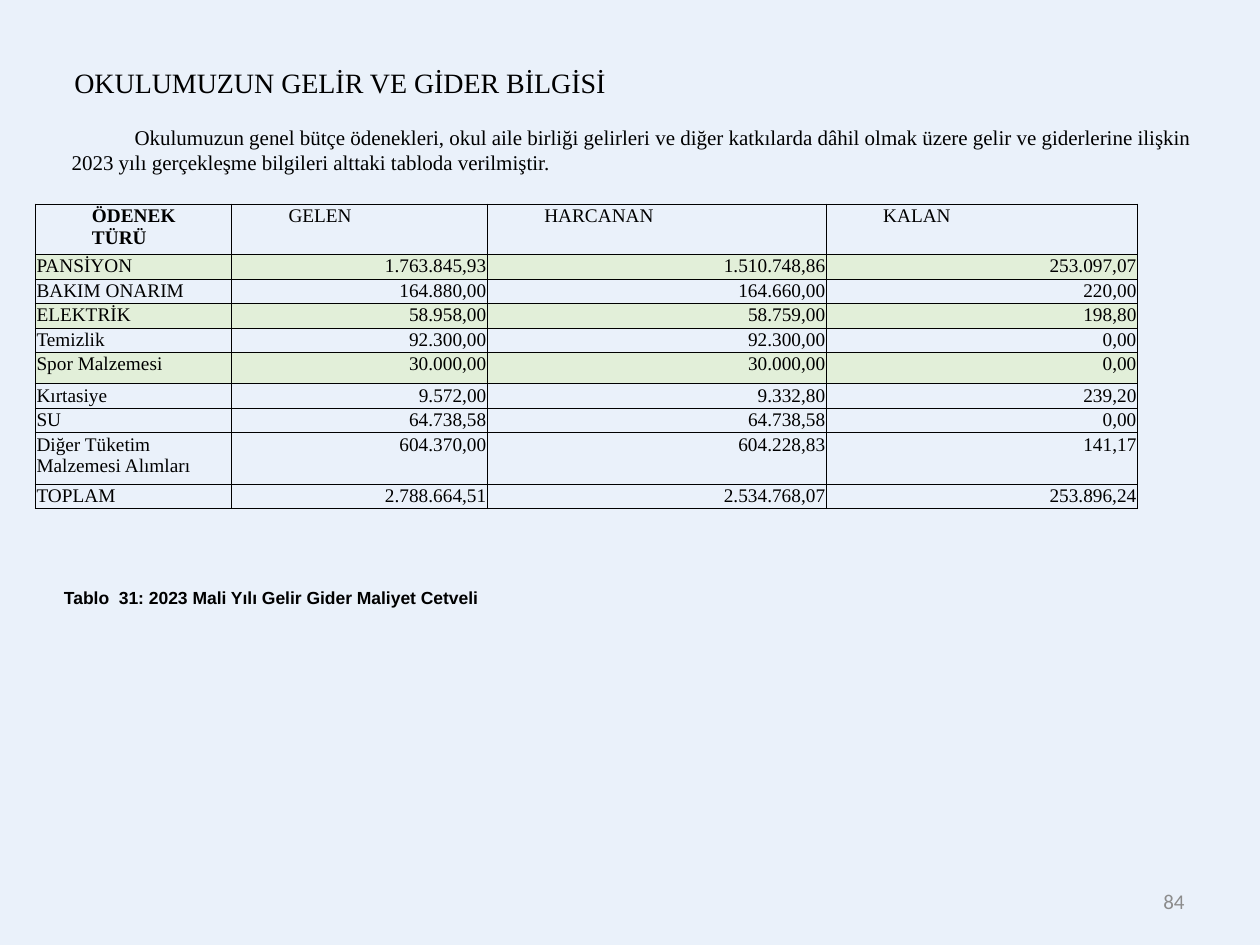
from lxml.etree import SubElement
from pptx import Presentation
from pptx.dml.color import RGBColor
from pptx.enum.text import MSO_ANCHOR, MSO_AUTO_SIZE, PP_ALIGN
from pptx.oxml.ns import qn
from pptx.util import Inches, Pt

SERIF = "Times New Roman"


def paint(fill, color):
    fill.solid()
    fill.fore_color.rgb = RGBColor.from_string(color)


def write(frame, text, size, font=SERIF, color="000000", bold=False, align=PP_ALIGN.LEFT):
    """Put one run in the first paragraph of a frame and return the paragraph."""
    para = frame.paragraphs[0]
    para.alignment = align
    run = para.add_run()
    run.text = text
    run.font.size = Pt(size)
    run.font.name = font
    run.font.bold = bold
    paint(run.font.fill, color)
    return para


deck = Presentation()
deck.slide_width, deck.slide_height = Inches(10), Inches(7.5)
slide = deck.slides.add_slide(deck.slide_layouts[6])
paint(slide.background.fill, "EAF1FA")

# Text boxes: place, wrap, grow, anchor, first line indent, text and its format
MID, TOP = MSO_ANCHOR.MIDDLE, MSO_ANCHOR.TOP
texts = [
    ((7.17, 6.95, 2.33, 0.4), True, False, MID, 0, "84",
     dict(size=12, font="Calibri", color="8C8C8C", align=PP_ALIGN.RIGHT)),
    ((0.41, 4.61, 9.06, 0.27), True, True, MID, 0,
     "Tablo  31: 2023 Mali Yılı Gelir Gider Maliyet Cetveli",
     dict(size=10, font="Arial", bold=True, align=PP_ALIGN.JUSTIFY)),
    ((0.47, 0.47, 4.46, 0.37), False, True, TOP, 0,
     "OKULUMUZUN GELİR VE GİDER BİLGİSİ", dict(size=16, align=PP_ALIGN.CENTER)),
    ((0.47, 0.94, 9.3, 0.5), True, True, TOP, 0.5,
     "Okulumuzun genel bütçe ödenekleri, okul aile birliği gelirleri ve diğer "
     "katkılarda dâhil olmak üzere gelir ve giderlerine ilişkin 2023 yılı "
     "gerçekleşme bilgileri alttaki tabloda verilmiştir.", dict(size=12)),
]
for place, wrap, grow, anchor, indent, text, style in texts:
    frame = slide.shapes.add_textbox(*map(Inches, place)).text_frame
    frame.word_wrap = wrap
    frame.auto_size = MSO_AUTO_SIZE.SHAPE_TO_FIT_TEXT if grow else MSO_AUTO_SIZE.NONE
    frame.vertical_anchor = anchor
    para = write(frame, text, **style)
    if indent:
        props = para._p.get_or_add_pPr()
        props.set("marL", "0")
        props.set("indent", str(Inches(indent)))

# Budget table
rows = [
    ("ÖDENEK TÜRÜ", "GELEN", "HARCANAN", "KALAN"),
    ("PANSİYON", "1.763.845,93", "1.510.748,86", "253.097,07"),
    ("BAKIM ONARIM", "164.880,00", "164.660,00", "220,00"),
    ("ELEKTRİK", "58.958,00", "58.759,00", "198,80"),
    ("Temizlik", "92.300,00", "92.300,00", "0,00"),
    ("Spor Malzemesi", "30.000,00", "30.000,00", "0,00"),
    ("Kırtasiye", "9.572,00", "9.332,80", "239,20"),
    ("SU", "64.738,58", "64.738,58", "0,00"),
    ("Diğer Tüketim Malzemesi Alımları", "604.370,00", "604.228,83", "141,17"),
    ("TOPLAM", "2.788.664,51", "2.534.768,07", "253.896,24"),
]
widths = [1.56, 2.03, 2.69, 2.47]
tall = {0: 0.4, 5: 0.25, 8: 0.41}
high = 2.42
short = (high - sum(tall.values())) / (len(rows) - len(tall))
green = (1, 3, 5)

table = slide.shapes.add_table(len(rows), len(widths), Inches(0.28), Inches(1.62),
                               Inches(sum(widths)), Inches(high)).table
table.first_row = table.horz_banding = False
for col, width in zip(table.columns, widths):
    col.width = Inches(width)

for r, row in enumerate(rows):
    table.rows[r].height = Inches(tall.get(r, short))
    for c, text in enumerate(row):
        cell = table.cell(r, c)
        cell.margin_left = Inches(0.01 if r else 0.45)
        cell.margin_right = cell.margin_top = Inches(0.01)
        cell.margin_bottom = 0
        write(cell.text_frame, text, 11, bold=r == c == 0,
              align=PP_ALIGN.RIGHT if r and c else PP_ALIGN.LEFT)
        props = cell._tc.get_or_add_tcPr()
        for side in ("lnL", "lnR", "lnT", "lnB"):
            line = SubElement(props, qn(f"a:{side}"), w=str(Pt(0.5)))
            solid = SubElement(line, qn("a:solidFill"))
            SubElement(solid, qn("a:srgbClr"), val="000000")
        if r in green:
            paint(cell.fill, "E2EFD9")
        else:
            cell.fill.background()

deck.save("out.pptx")
